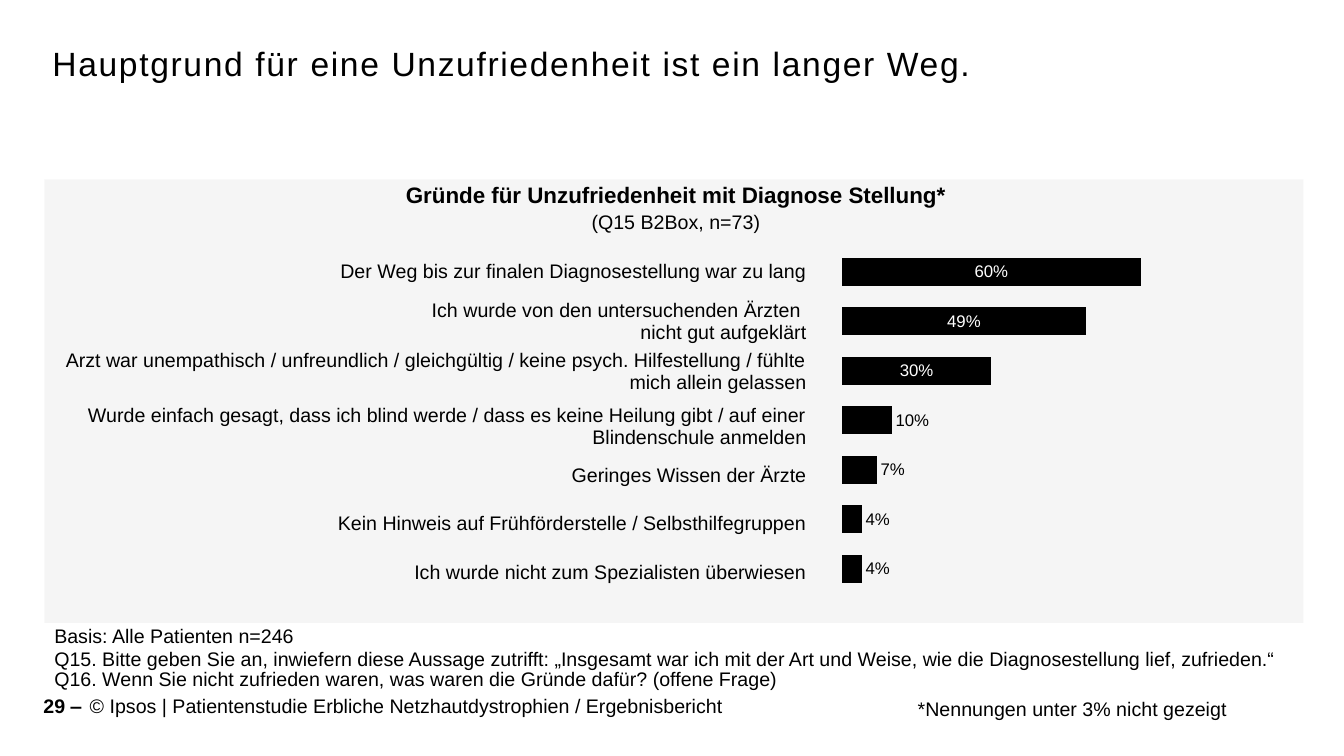
from dataclasses import dataclass

from lxml import etree
from pptx import Presentation
from pptx import util as u
from pptx.chart import data
from pptx.dml import color
from pptx.enum import chart as charts, shapes, text
from pptx.oxml import ns


@dataclass(frozen=True)
class Theme:
    font: str = "Arial"
    ink: str = "000000"
    paper: str = "FFFFFF"
    panel: str = "F2F2F2"
    title_size: int = 24
    heading_size: int = 16
    body_size: int = 14
    label_size: int = 12


THEME = Theme()
WIDTH, HEIGHT = u.Inches(13.333), u.Inches(7.5)
REASONS_TOP, REASONS_HEIGHT = 32.67, 45.87
ROW_HEIGHTS = [6.53, 6.8, 5.73, 8.4, 4.67, 7.87, 5.2]
INSIDE_LABEL_MINIMUM = 0.3

REASONS = [
    ("Der Weg bis zur finalen Diagnosestellung war zu lang", 0.6),
    ("Ich wurde von den untersuchenden Ärzten \vnicht gut aufgeklärt", 0.49),
    ("Arzt war unempathisch / unfreundlich / gleichgültig / keine psych. "
     "Hilfestellung / fühlte mich allein gelassen", 0.3),
    ("Wurde einfach gesagt, dass ich blind werde / dass es keine Heilung gibt / "
     "auf einer Blindenschule anmelden", 0.1),
    ("Geringes Wissen der Ärzte", 0.07),
    ("Kein Hinweis auf Frühförderstelle / Selbsthilfegruppen", 0.04),
    ("Ich wurde nicht zum Spezialisten überwiesen", 0.04),
]


def across(percent):
    return round(WIDTH * percent / 100)


def down(percent):
    return round(HEIGHT * percent / 100)


def area(left, top, width, height):
    return across(left), down(top), across(width), down(height)


def rgb(value):
    return color.RGBColor.from_string(value)


def style_font(font, size, ink=THEME.ink, bold=False):
    font.name = THEME.font
    font.size = u.Pt(size)
    font.bold = bold
    font.color.rgb = rgb(ink)


def write(frame, lines, align=text.PP_ALIGN.LEFT, anchor=text.MSO_ANCHOR.TOP,
          insets=(0.1, 0.05, 0.1, 0.05), size=THEME.body_size, bold=False,
          spacing=1.0, gap=0):
    frame.word_wrap = True
    frame.vertical_anchor = anchor
    (frame.margin_left, frame.margin_top,
     frame.margin_right, frame.margin_bottom) = map(u.Inches, insets)
    frame.text = "\n".join(lines)
    for index, paragraph in enumerate(frame.paragraphs):
        paragraph.alignment = align
        paragraph.line_spacing = spacing
        if index:
            paragraph.space_before = u.Pt(gap)
        for run in paragraph.runs:
            style_font(run.font, size, bold=bold)


def add_text(slide, place, lines, **options):
    box = slide.shapes.add_textbox(*area(*place))
    write(box.text_frame, lines, **options)
    return box


def add_box(slide, place, fill, opacity=100):
    box = slide.shapes.add_shape(shapes.MSO_SHAPE.RECTANGLE, *area(*place))
    box.shadow.inherit = False
    box.line.fill.background()
    box.fill.solid()
    box.fill.fore_color.rgb = rgb(fill)
    if opacity < 100:
        tint = box.fill._xPr.find(".//" + ns.qn("a:srgbClr"))
        etree.SubElement(tint, ns.qn("a:alpha"), val=str(opacity * 1000))
    return box


def set_title(slide, title):
    shape = slide.shapes.title
    shape.left, shape.top, shape.width, shape.height = area(3.3, 5.6, 95.7, 6.13)
    write(shape.text_frame, [title], size=THEME.title_size, spacing=0.9,
          insets=(0.08, 0.05, 0.08, 0.05))
    shape.text_frame.auto_size = text.MSO_AUTO_SIZE.NONE
    for run in shape.text_frame.paragraphs[0].runs:
        run.font._element.set("spc", "120")


def add_heading(slide):
    box = add_text(slide, (3.9, 23.73, 92.78, 17.87),
                   ["Gründe für Unzufriedenheit mit Diagnose Stellung*",
                    "(Q15 B2Box, n=73)"],
                   align=text.PP_ALIGN.CENTER, spacing=0.9, gap=3)
    style_font(box.text_frame.paragraphs[0].runs[0].font, THEME.heading_size, bold=True)


def fix_plot_area(chart, **shares):
    plot_area = chart._chartSpace.chart.plotArea
    for old in plot_area.findall(ns.qn("c:layout")):
        plot_area.remove(old)
    layout = etree.Element(ns.qn("c:layout"))
    manual = etree.SubElement(layout, ns.qn("c:manualLayout"))
    settings = {"layoutTarget": "inner", "xMode": "edge", "yMode": "edge", **shares}
    for name, value in settings.items():
        etree.SubElement(manual, ns.qn("c:" + name), val=str(value))
    plot_area.insert(0, layout)


def add_reason_chart(slide):
    chart_data = data.CategoryChartData(number_format="0%")
    chart_data.categories = [str(number) for number in range(1, len(REASONS) + 1)]
    chart_data.add_series("Series 1", [share for _, share in REASONS])
    chart = slide.shapes.add_chart(
        charts.XL_CHART_TYPE.BAR_CLUSTERED,
        *area(30.23, REASONS_TOP, 58.5, REASONS_HEIGHT), chart_data).chart
    chart.has_legend = False
    chart.has_title = False
    style_font(chart.font, THEME.label_size)
    fix_plot_area(chart, x=0.554, y=0, w=0.444, h=1)
    chart.category_axis.reverse_order = True
    chart.category_axis.visible = False
    chart.value_axis.visible = False
    chart.value_axis.has_major_gridlines = False
    chart.value_axis.minimum_scale = 0
    chart.value_axis.maximum_scale = 0.7

    plot = chart.plots[0]
    plot.gap_width = 75
    plot.vary_by_categories = False
    series = plot.series[0]
    series.format.fill.solid()
    series.format.fill.fore_color.rgb = rgb(THEME.ink)
    labels = series.data_labels
    labels.show_value = True
    labels.number_format = "0%"
    labels.number_format_is_linked = False
    labels.position = charts.XL_LABEL_POSITION.CENTER
    style_font(labels.font, THEME.label_size, THEME.paper)
    for index, (_, share) in enumerate(REASONS):
        if share < INSIDE_LABEL_MINIMUM:
            label = series.points[index].data_label
            style_font(label.font, THEME.label_size)
            label.position = charts.XL_LABEL_POSITION.OUTSIDE_END


def add_reason_table(slide):
    frame = slide.shapes.add_table(
        len(REASONS), 1, *area(2.93, REASONS_TOP, 57.68, REASONS_HEIGHT))
    table = frame.table
    table.first_row = False
    table.horz_banding = False
    style = table._tbl.tblPr.find(ns.qn("a:tableStyleId"))
    style.text = "{2D5ABB26-0587-4C30-8999-92F81FD0307C}"
    for row, height, (reason, _) in zip(table.rows, ROW_HEIGHTS, REASONS):
        row.height = down(height)
        cell = row.cells[0]
        cell.fill.background()
        cell.vertical_anchor = text.MSO_ANCHOR.MIDDLE
        cell.margin_left = cell.margin_top = cell.margin_bottom = 0
        cell.margin_right = u.Inches(0.08)
        paragraph = cell.text_frame.paragraphs[0]
        paragraph.text = reason
        paragraph.alignment = text.PP_ALIGN.RIGHT
        for run in paragraph.runs:
            style_font(run.font, THEME.body_size)


def add_footer(slide):
    footer = {"anchor": text.MSO_ANCHOR.MIDDLE, "insets": (0, 0.05, 0, 0.05)}
    add_text(slide, (6.68, 90.67, 58, 5.33),
             ["© Ipsos | Patientenstudie Erbliche Netzhautdystrophien / Ergebnisbericht"],
             **footer)
    add_text(slide, (3.15, 90.67, 2.93, 5.33), ["29 ‒"],
             align=text.PP_ALIGN.RIGHT, bold=True, **footer)
    note = add_box(slide, (66.83, 92, 25.2, 3.6), THEME.paper)
    write(note.text_frame, ["*Nennungen unter 3% nicht gezeigt"],
          align=text.PP_ALIGN.RIGHT, anchor=text.MSO_ANCHOR.MIDDLE)


def main():
    presentation = Presentation()
    presentation.slide_width, presentation.slide_height = WIDTH, HEIGHT
    slide = presentation.slides.add_slide(presentation.slide_layouts[5])
    set_title(slide, "Hauptgrund für eine Unzufriedenheit ist ein langer Weg.")
    add_text(slide, (3.3, 83.07, 92.1, 5.47),
             ["Basis: Alle Patienten n=246",
              "Q15. Bitte geben Sie an, inwiefern diese Aussage zutrifft: „Insgesamt war "
              "ich mit der Art und Weise, wie die Diagnosestellung lief, zufrieden.“ "
              "Q16. Wenn Sie nicht zufrieden waren, was waren die Gründe dafür? "
              "(offene Frage)"],
             insets=(0.1, 0, 0.01, 0), spacing=0.85, gap=2)
    add_box(slide, (3.3, 23.73, 93.68, 58.67), THEME.panel, opacity=70)
    add_heading(slide)
    add_reason_chart(slide)
    add_reason_table(slide)
    add_footer(slide)
    presentation.save("out.pptx")


if __name__ == "__main__":
    main()
